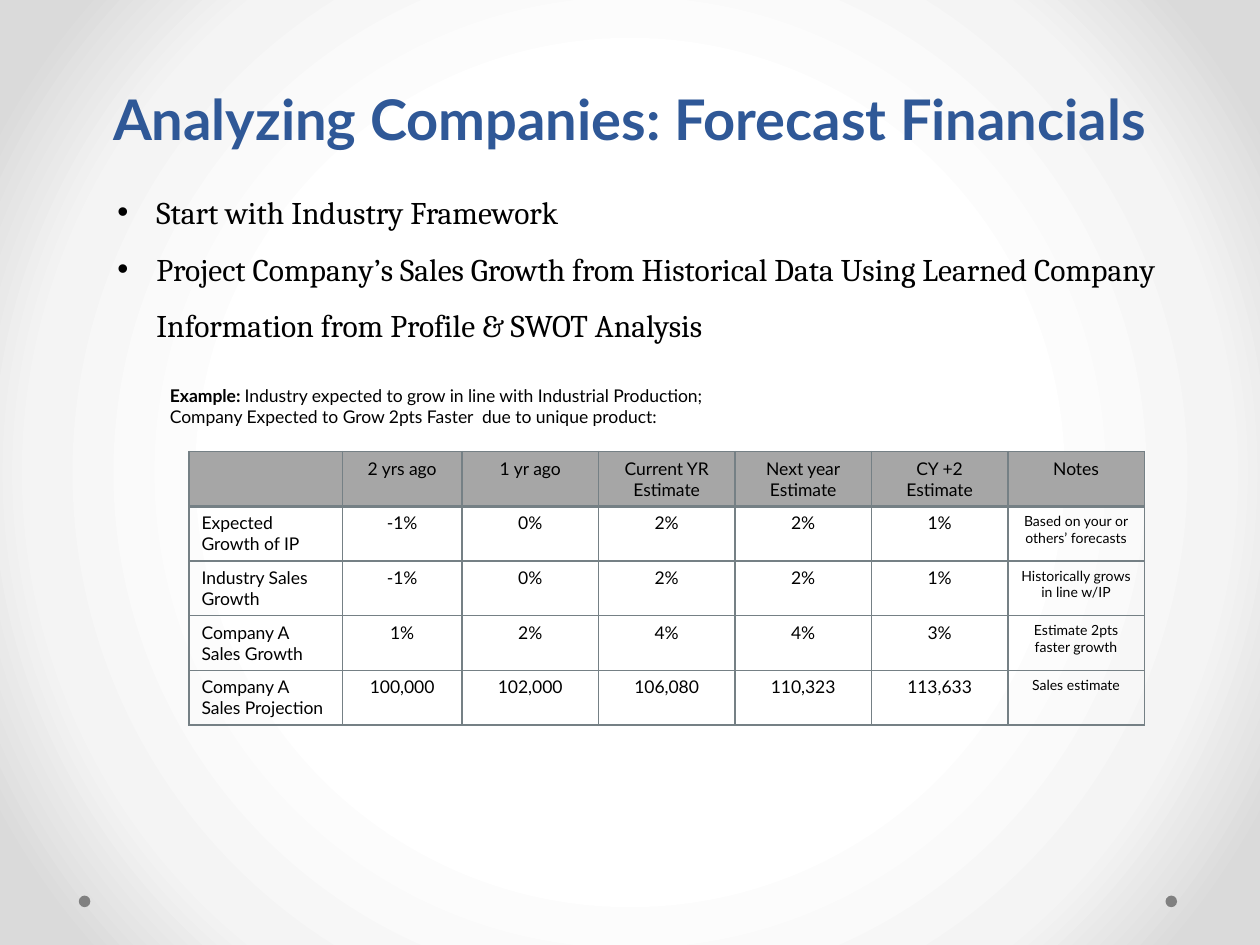
from dataclasses import dataclass

from lxml.etree import SubElement
from pptx import Presentation
from pptx.dml.color import RGBColor
from pptx.enum.shapes import MSO_SHAPE
from pptx.enum.text import MSO_ANCHOR, MSO_AUTO_SIZE, PP_ALIGN
from pptx.oxml import parse_xml
from pptx.oxml.ns import nsdecls, qn
from pptx.util import Emu, Inches, Pt

UNITS_PER_INCH = 12
BLACK, BLUE, GREY, HEADER_GREY, RULE_GREY = "000000", "2F5897", "808080", "A6A6A6", "758085"
GLOW = ((50, "FFFFFF"), (76, "F4F4F4"), (92, "DADADA"))


@dataclass(frozen=True)
class Area:
    """A place on the grid of twelve units to the inch."""
    column: float
    row: float
    columns: float
    rows: float

    def box(self) -> tuple[Emu, Emu, Emu, Emu]:
        return units(self.column), units(self.row), units(self.columns), units(self.rows)


@dataclass(frozen=True)
class Style:
    """The look of a run of text."""
    size: float
    font: str = "Lato"
    color: str = BLACK
    bold: bool = False


@dataclass(frozen=True)
class Measure:
    """One body row of the forecast table."""
    label: str
    values: tuple[str, ...]
    note: str


TITLE_AREA = Area(6, 0, 108, 15)
POINTS_AREA = Area(10, 16, 104, 17)
EXAMPLE_AREA = Area(15, 36.1, 53.4, 5.3)
TABLE_AREA = Area(18, 43, 91, 26)
DOTS = (Area(111, 85.3, 1.1, 1.1), Area(7.5, 85.3, 1.1, 1.1))
COLUMN_UNITS = (14.6, 11.4, *[13] * 5)

TITLE_STYLE = Style(32, color=BLUE, bold=True)
POINT_STYLE = Style(18, font="Cambria")
CELL_STYLE, NOTE_STYLE, LEAD_STYLE = Style(10), Style(8), Style(10, bold=True)

POINTS = (
    "Start with Industry Framework",
    "Project Company’s Sales Growth from Historical Data Using Learned Company "
    "Information from Profile & SWOT Analysis",
)
EXAMPLE_LEAD = "Example: "
EXAMPLE_LINES = (
    "Industry expected to grow in line with Industrial Production;",
    "Company Expected to Grow 2pts Faster  due to unique product:",
)
HEADINGS = ("", "2 yrs ago", "1 yr ago", "Current YR Estimate",
            "Next year\nEstimate", "CY +2\nEstimate", "Notes")
MEASURES = (
    Measure("Expected\nGrowth of IP", ("-1%", "0%", "2%", "2%", "1%"),
            "Based on your or others’ forecasts"),
    Measure("Industry Sales\nGrowth", ("-1%", "0%", "2%", "2%", "1%"),
            "Historically grows in line w/IP"),
    Measure("Company A Sales Growth", ("1%", "2%", "4%", "4%", "3%"),
            "Estimate 2pts faster growth"),
    Measure("Company A Sales Projection",
            ("100,000", "102,000", "106,080", "110,323", "113,633"), "Sales estimate"),
)


def units(count: float) -> Emu:
    """Turn grid units into a length."""
    return Inches(count / UNITS_PER_INCH)


def rgb(value: str) -> RGBColor:
    """Turn a hex string into a colour."""
    return RGBColor.from_string(value)


def style_run(run, style: Style) -> None:
    """Apply a style to one run."""
    run.font.size = Pt(style.size)
    run.font.name = style.font
    run.font.bold = style.bold
    run.font.color.rgb = rgb(style.color)


def write(frame, text: str, style: Style, align=PP_ALIGN.LEFT) -> None:
    """Fill a frame with one paragraph for each line of text."""
    frame.text = text
    for paragraph in frame.paragraphs:
        paragraph.alignment = align
        for run in paragraph.runs:
            style_run(run, style)


def add_frame(slide, area: Area, wrap: bool = True):
    """Add a text box and return its text frame."""
    frame = slide.shapes.add_textbox(*area.box()).text_frame
    frame.word_wrap = wrap
    return frame


def paint_background(slide) -> None:
    """Give the slide its radial glow."""
    stops = "".join(f'<a:gs pos="{share * 1000}"><a:srgbClr val="{color}"/></a:gs>'
                    for share, color in GLOW)
    glow = parse_xml(
        f'<a:gradFill {nsdecls("a")} rotWithShape="1"><a:gsLst>{stops}</a:gsLst>'
        '<a:path path="circle"><a:fillToRect l="50000" t="50000" r="50000" b="50000"/>'
        '</a:path></a:gradFill>')
    properties = slide.element.cSld.get_or_add_bgPr()
    properties.replace(properties[0], glow)


def add_dot(slide, area: Area) -> None:
    """Add one footer dot."""
    dot = slide.shapes.add_shape(MSO_SHAPE.OVAL, *area.box())
    dot.shadow.inherit = False
    dot.fill.solid()
    dot.fill.fore_color.rgb = rgb(GREY)
    dot.line.fill.background()


def add_title(slide) -> None:
    """Add the heading."""
    frame = add_frame(slide, TITLE_AREA)
    frame.vertical_anchor = MSO_ANCHOR.BOTTOM
    write(frame, "Analyzing Companies: Forecast Financials", TITLE_STYLE, PP_ALIGN.CENTER)
    frame.paragraphs[0].line_spacing = Pt(58)


def add_points(slide) -> None:
    """Add the bulleted points."""
    frame = add_frame(slide, POINTS_AREA)
    frame.margin_bottom = 0
    write(frame, "\n".join(POINTS), POINT_STYLE)
    hang = Inches(0.31)
    for paragraph in frame.paragraphs:
        paragraph.line_spacing = 1.5
        properties = paragraph._p.get_or_add_pPr()
        properties.set("marL", str(hang))
        properties.set("indent", str(-hang))
        SubElement(properties, qn("a:buFont"), typeface="Arial")
        SubElement(properties, qn("a:buChar"), char="•")


def add_example(slide) -> None:
    """Add the example with its bold lead."""
    frame = add_frame(slide, EXAMPLE_AREA, wrap=False)
    frame.auto_size = MSO_AUTO_SIZE.SHAPE_TO_FIT_TEXT
    write(frame, "\n".join((EXAMPLE_LEAD, EXAMPLE_LINES[1])), CELL_STYLE)
    opening = frame.paragraphs[0]
    style_run(opening.runs[0], LEAD_STYLE)
    claim = opening.add_run()
    claim.text = EXAMPLE_LINES[0]
    style_run(claim, CELL_STYLE)


def rule_cell(cell, top: float, bottom: float) -> None:
    """Draw the four borders of a cell, ahead of its fill."""
    properties = cell._tc.get_or_add_tcPr()
    widths = {"lnL": 1, "lnR": 1, "lnT": top, "lnB": bottom}
    for position, (side, width) in enumerate(widths.items()):
        properties.insert(position, parse_xml(
            f'<a:{side} {nsdecls("a")} w="{Pt(width)}"><a:solidFill>'
            f'<a:srgbClr val="{RULE_GREY}"/></a:solidFill></a:{side}>'))


def add_forecast(slide) -> None:
    """Add the forecast table."""
    lines = [HEADINGS] + [(m.label, *m.values, m.note) for m in MEASURES]
    table = slide.shapes.add_table(len(lines), len(HEADINGS), *TABLE_AREA.box()).table
    table.first_row = table.horz_banding = False
    for column, width in zip(table.columns, COLUMN_UNITS):
        column.width = units(width)
    for row, line in enumerate(lines):
        table.rows[row].height = units(TABLE_AREA.rows / len(lines))
        for column, text in enumerate(line):
            cell = table.cell(row, column)
            is_note = row > 0 and column == len(line) - 1
            write(cell.text_frame, text, NOTE_STYLE if is_note else CELL_STYLE,
                  PP_ALIGN.CENTER if column else PP_ALIGN.LEFT)
            if row == 0:
                cell.fill.solid()
                cell.fill.fore_color.rgb = rgb(HEADER_GREY)
            else:
                cell.fill.background()
            rule_cell(cell, top=2 if row == 1 else 1, bottom=2 if row == 0 else 1)


def main() -> None:
    """Build the slide and save it."""
    deck = Presentation()
    deck.slide_width, deck.slide_height = Inches(10), Inches(7.5)
    slide = deck.slides.add_slide(deck.slide_layouts[6])
    paint_background(slide)
    for area in DOTS:
        add_dot(slide, area)
    for add_part in (add_title, add_points, add_forecast, add_example):
        add_part(slide)
    deck.save("out.pptx")


if __name__ == "__main__":
    main()
